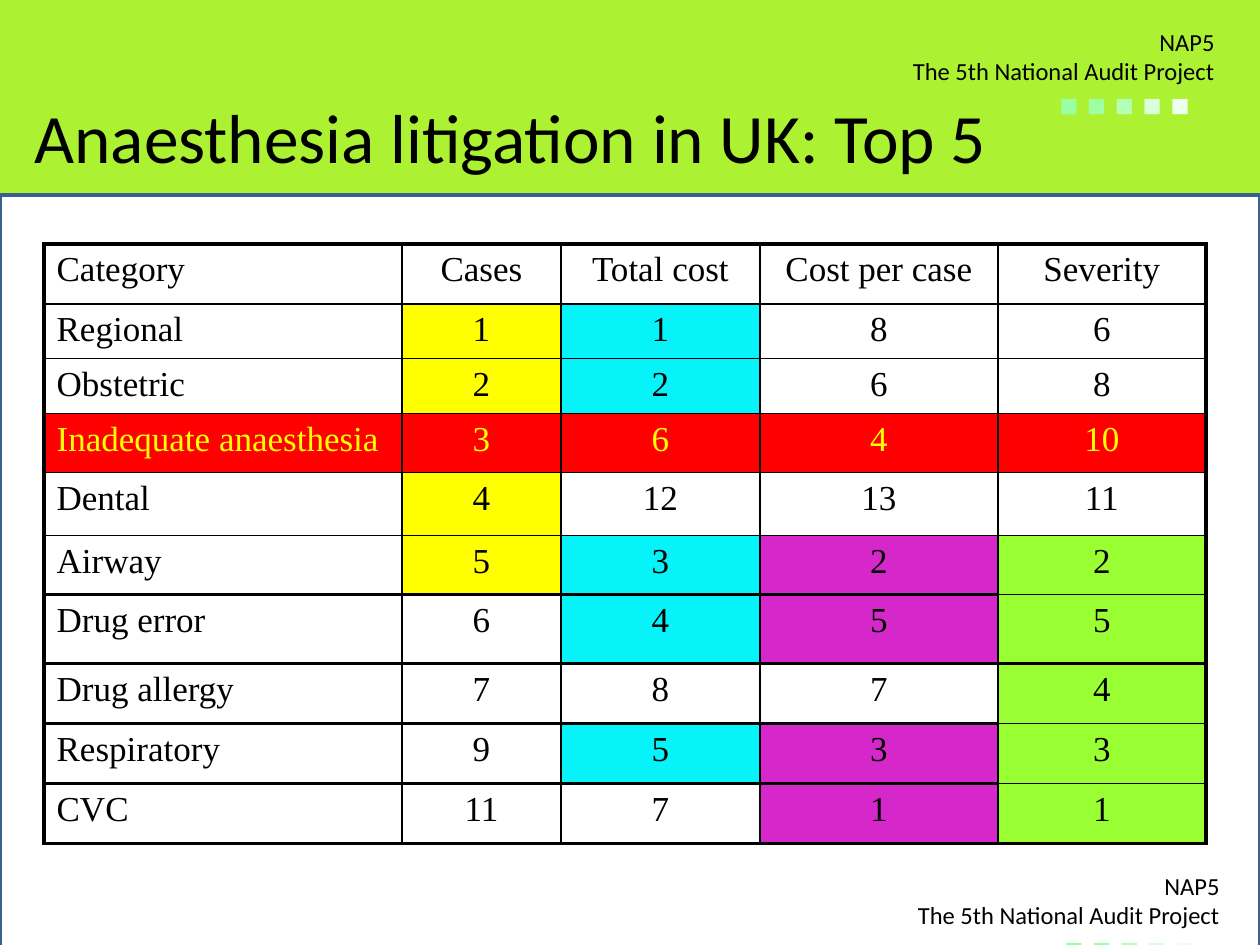
from dataclasses import dataclass

from lxml import etree
from pptx import Presentation
from pptx import util as u
from pptx.dml.color import RGBColor
from pptx.enum import shapes, text
from pptx.oxml.ns import qn


@dataclass(frozen=True)
class Theme:
    lime: str = "ADF232"
    white: str = "FFFFFF"
    black: str = "000000"
    edge: str = "3A5F8C"
    alert: str = "FF0000"
    note: str = "FFFF00"
    # Highlights for the top five ranks, one per number column
    tops: tuple = ("FFFF00", "05F3F9", "D628CA", "99FF33")
    dots: tuple = ("99FFA4", "A0FFA3", "B3FFB5", "DAFFDB", "EDFFED")
    sans: str = "Calibri"
    serif: str = "Times New Roman"
    mark: str = "Arial"
    title: float = 39.6
    body: int = 20
    dot: int = 18
    small: int = 14
    thin: int = 1
    thick: float = 2.25


T = Theme()
LEFT, MID, RIGHT = (text.PP_ALIGN.LEFT, text.PP_ALIGN.CENTER, text.PP_ALIGN.RIGHT)

ROWS = (
    ("Category", "Cases", "Total cost", "Cost per case", "Severity"),
    ("Regional", 1, 1, 8, 6),
    ("Obstetric", 2, 2, 6, 8),
    ("Inadequate anaesthesia", 3, 6, 4, 10),
    ("Dental", 4, 12, 13, 11),
    ("Airway", 5, 3, 2, 2),
    ("Drug error", 6, 4, 5, 5),
    ("Drug allergy", 7, 8, 7, 4),
    ("Respiratory", 9, 5, 3, 3),
    ("CVC", 11, 7, 1, 1),
)
WIDE = (358, 159, 199, 238, 208)
TALL = (60, 54, 55, 59, 63, 59, 69, 60, 60, 60)
FOCUS = 3  # row of the highlighted category


def px(n):
    return u.Inches(n / 126)


def rgb(tone):
    return RGBColor.from_string(tone)


def write(para, words, size=T.body, font=T.sans, tone=T.black, align=LEFT):
    para.alignment = align
    run = para.add_run()
    run.text = words
    run.font.size = u.Pt(size)
    run.font.name = font
    run.font.color.rgb = rgb(tone)


def frame(slide, box):
    area = slide.shapes.add_textbox(*map(px, box)).text_frame
    area.word_wrap = True
    area.vertical_anchor = text.MSO_ANCHOR.MIDDLE
    return area


def panel(slide, box):
    rect = slide.shapes.add_shape(shapes.MSO_SHAPE.RECTANGLE, *map(px, box))
    rect.shadow.inherit = False
    rect.fill.solid()
    rect.fill.fore_color.rgb = rgb(T.white)
    rect.line.color.rgb = rgb(T.edge)
    rect.line.width = u.Pt(2)


def badge(slide, box):
    area = frame(slide, box)
    write(area.paragraphs[0], "NAP5", size=T.small, align=RIGHT)
    write(area.add_paragraph(), "The 5th National Audit Project",
          size=T.small, align=RIGHT)
    # Row of fading squares, set in by an indent
    row = area.add_paragraph()
    row._p.get_or_add_pPr().set("marL", str(px(219)))
    for i, tone in enumerate(T.dots):
        gap = " " if i < len(T.dots) - 1 else ""
        write(row, "■" + gap, size=T.dot, font=T.mark, tone=tone)


def title(slide, box):
    write(frame(slide, box).paragraphs[0], "Anaesthesia litigation in UK: Top 5",
          size=T.title, align=MID)


def heavy(r, c):
    """Whether the rule below row r is thick in column c."""
    last = len(ROWS) - 1
    if c == len(WIDE) - 1:
        return r in (-1, 6, last)
    return r == -1 or 5 <= r <= last


def rule(cell, r, c):
    sides = {"L": c == 0, "R": c == len(WIDE) - 1,
             "T": heavy(r - 1, c), "B": heavy(r, c)}
    props = cell._tc.get_or_add_tcPr()
    for i, (side, bold) in enumerate(sides.items()):
        line = etree.Element(qn("a:ln" + side),
                             w=str(u.Pt(T.thick if bold else T.thin)))
        fill = etree.SubElement(line, qn("a:solidFill"))
        etree.SubElement(fill, qn("a:srgbClr"), val=T.black)
        props.insert(i, line)


def shade(r, c, item):
    if r == FOCUS:
        return T.alert
    if r and c and item <= 5:
        return T.tops[c - 1]
    return None


def ranks(slide, box):
    grid = slide.shapes.add_table(len(ROWS), len(WIDE), *map(px, box)).table
    grid.first_row = grid.horz_banding = False
    for col, w in zip(grid.columns, WIDE):
        col.width = px(w)
    for row, h in zip(grid.rows, TALL):
        row.height = px(h)
    for r, items in enumerate(ROWS):
        for c, item in enumerate(items):
            cell = grid.cell(r, c)
            tone = shade(r, c, item)
            if tone:
                cell.fill.solid()
                cell.fill.fore_color.rgb = rgb(tone)
            else:
                cell.fill.background()
            rule(cell, r, c)
            write(cell.text_frame.paragraphs[0], str(item), font=T.serif,
                  tone=T.note if r == FOCUS else T.black,
                  align=MID if c else LEFT)


def main():
    deck = Presentation()
    deck.slide_width, deck.slide_height = px(1260), px(945)
    slide = deck.slides.add_slide(deck.slide_layouts[6])
    back = slide.background.fill
    back.solid()
    back.fore_color.rgb = rgb(T.lime)

    panel(slide, (0, 195, 1260, 804))
    badge(slide, (828, 25, 399, 100))
    badge(slide, (833, 869, 399, 100))
    title(slide, (-25, 57, 1071, 158))
    ranks(slide, (44, 244, sum(WIDE), sum(TALL)))
    deck.save("out.pptx")


if __name__ == "__main__":
    main()
